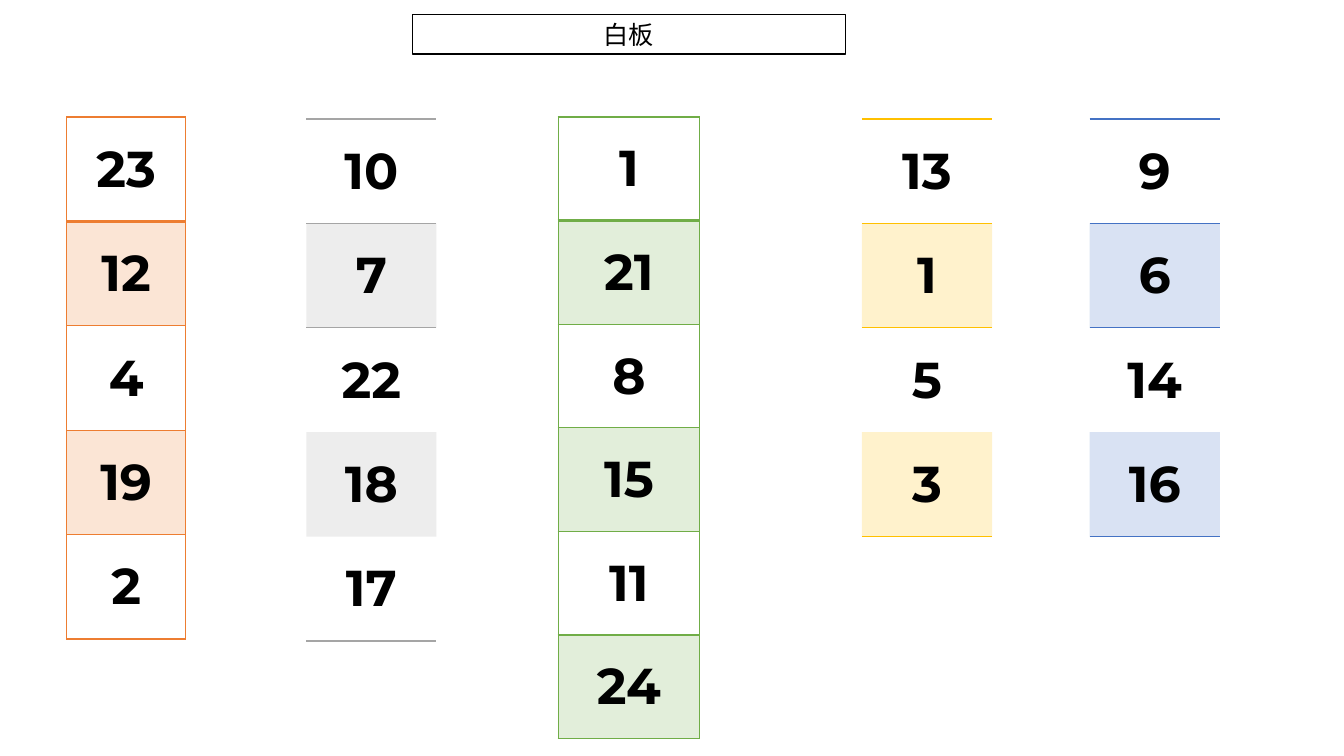
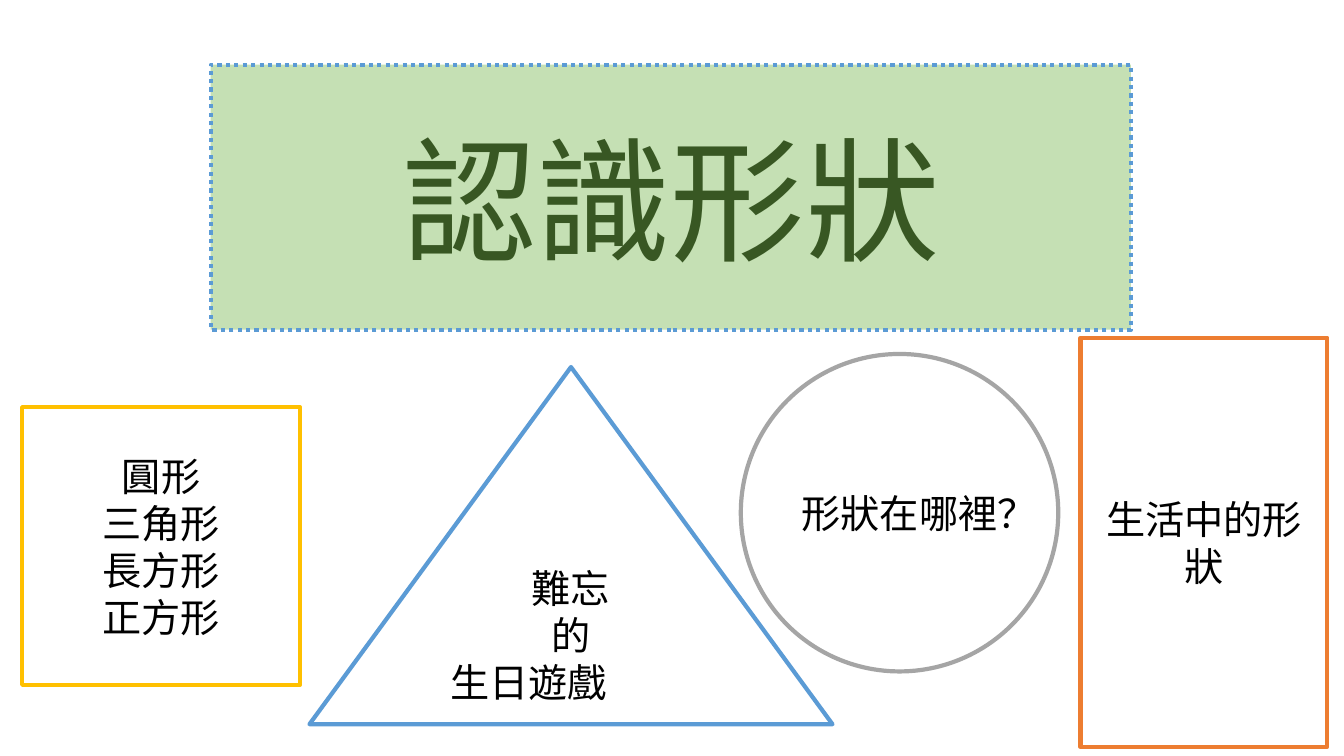
"""Build a whiteboard of number columns and a lesson opener on shapes."""
import dataclasses
import typing

import lxml.etree
import pptx
import pptx.dml.color
import pptx.enum.dml
import pptx.enum.shapes
import pptx.enum.text
import pptx.oxml.ns
import pptx.util

Cm = pptx.util.Cm
Pt = pptx.util.Pt
qn = pptx.oxml.ns.qn
KIND = pptx.enum.shapes.MSO_SHAPE
ALIGN = pptx.enum.text.PP_ALIGN
MIDDLE = pptx.enum.text.MSO_ANCHOR.MIDDLE
PLAIN = "{2D5ABB26-0587-4C30-8999-92F81FD0307C}"

BLACK = "000000"
WHITE = "FFFFFF"
ORANGE = "ED7D31"
GREY = "A5A5A5"
GREEN = "70AD47"
GOLD = "FFC000"
BLUE = "4472C4"
SKY = "5B9BD5"
LEAF = "C5E0B4"
MOSS = "385723"

HAN = "Noto Sans CJK SC"
DIGIT = {"name": "Montserrat", "size": Pt(36), "bold": True}
LABEL = {"name": "Calibri", "size": Pt(18), "bold": False}
HERO = {"name": HAN, "size": Pt(96), "bold": False}
BODY = {"name": HAN, "size": Pt(28), "bold": False}
FRAME = {
    "word_wrap": True,
    "vertical_anchor": MIDDLE,
    "auto_size": pptx.enum.text.MSO_AUTO_SIZE.NONE,
}


@dataclasses.dataclass
class Column:
    """A one-column table of numbers."""

    left: float
    top: float
    width: float
    row: float
    tone: str
    values: tuple[int, ...]
    boxed: bool = False


@dataclasses.dataclass
class Card:
    """An outlined shape with lines of text."""

    kind: typing.Any
    box: tuple[float, float, float, float]
    edge: str
    lines: tuple[str, ...]
    last: typing.Any = ALIGN.CENTER


COLUMNS = (
    Column(1.68, 2.95, 3, 2.63, ORANGE, (23, 12, 4, 19, 2), True),
    Column(7.72, 3, 3.28, 2.63, GREY, (10, 7, 22, 18, 17)),
    Column(14.07, 2.95, 3.56, 2.61, GREEN, (1, 21, 8, 15, 11, 24), True),
    Column(21.72, 3, 3.28, 2.63, GOLD, (13, 1, 5, 3)),
    Column(27.46, 3, 3.28, 2.63, BLUE, (9, 6, 14, 16)),
)
CARDS = (
    Card(KIND.RECTANGLE, (0.56, 10.26, 7, 7), GOLD,
         ("圓形", "三角形", "長方形", "正方形")),
    Card(KIND.ISOSCELES_TRIANGLE, (7.8, 9.25, 13.18, 9), SKY,
         ("難忘", "的", "生日遊戲"), ALIGN.LEFT),
    Card(KIND.OVAL, (18.67, 8.92, 8, 8), GREY, ("形狀在哪裡？",)),
    Card(KIND.RECTANGLE, (27.23, 8.51, 6.22, 10.31), ORANGE, ("生活中的形狀",)),
)


def apply(target: typing.Any, values: dict[str, typing.Any]) -> None:
    """Set each named value on the target."""
    for name, value in values.items():
        setattr(target, name, value)


def paint(fill: typing.Any, tone: str) -> None:
    """Give a fill one solid colour."""
    fill.solid()
    fill.fore_color.rgb = pptx.dml.color.RGBColor.from_string(tone)


def write(frame: typing.Any, lines: tuple[str, ...], form: dict[str, typing.Any],
          tone: str = BLACK, last: typing.Any = ALIGN.CENTER) -> None:
    """Write centred lines, the last one with its own alignment."""
    for spot, line in enumerate(lines):
        para = frame.add_paragraph() if spot else frame.paragraphs[0]
        para.alignment = last if spot == len(lines) - 1 else ALIGN.CENTER
        run = para.add_run()
        run.text = line
        paint(run.font.fill, tone)
        apply(run.font, form)
        face = lxml.etree.SubElement(run.font._element, qn("a:ea"))
        face.set("typeface", form["name"])


def place(shape: typing.Any, box: tuple[float, float, float, float]) -> None:
    """Move and size a shape in centimetres."""
    apply(shape, dict(zip(("left", "top", "width", "height"), map(Cm, box))))


def finish(shape: typing.Any, fill: str, edge: str, weight: float) -> None:
    """Set the fill, outline and text frame of a shape."""
    paint(shape.fill, fill)
    paint(shape.line.fill, edge)
    shape.line.width = Pt(weight)
    apply(shape.text_frame, FRAME)


def head(slide: typing.Any, box: tuple[float, float, float, float],
         form: str, fill: str, edge: str, weight: float) -> typing.Any:
    """Turn the title placeholder into a framed shape."""
    title = slide.shapes.title
    place(title, box)
    geom = lxml.etree.SubElement(title._element.spPr, qn("a:prstGeom"))
    geom.set("prst", form)
    lxml.etree.SubElement(geom, qn("a:avLst"))
    finish(title, fill, edge, weight)
    return title


def rule(cell: typing.Any, side: str, tone: str, weight: float) -> None:
    """Draw one border of a cell."""
    props = cell._tc.get_or_add_tcPr()
    line = lxml.etree.SubElement(props, qn(f"a:ln{side}"), w=str(Pt(weight)))
    solid = lxml.etree.SubElement(line, qn("a:solidFill"))
    lxml.etree.SubElement(solid, qn("a:srgbClr"), val=tone)


def sides(column: Column, spot: int) -> dict[str, float]:
    """Tell which borders a row has and how wide they are."""
    if column.boxed:
        return {"L": 1, "R": 1, "T": 1 if spot != 1 else 2, "B": 1 if spot else 2}
    if spot == 0:
        return {"T": 1, "B": 1}
    if spot == 1:
        return {"T": 1}
    return {"B": 1} if spot == len(column.values) - 1 else {}


def draw_column(slide: typing.Any, column: Column) -> None:
    """Draw one table of numbers with every second row tinted."""
    count = len(column.values)
    box = (column.left, column.top, column.width, column.row * count)
    table = slide.shapes.add_table(count, 1, *map(Cm, box)).table
    apply(table, {"first_row": False, "horz_banding": False})
    table._tbl.tblPr.find(qn("a:tableStyleId")).text = PLAIN
    for spot, value in enumerate(column.values):
        table.rows[spot].height = Cm(column.row)
        cell = table.cell(spot, 0)
        cell.vertical_anchor = MIDDLE
        for side, weight in sides(column, spot).items():
            rule(cell, side, column.tone, weight)
        if spot % 2:
            paint(cell.fill, column.tone)
            shade = cell._tc.tcPr.find(qn("a:solidFill"))[0]
            lxml.etree.SubElement(shade, qn("a:alpha"), val="20000")
        else:
            cell.fill.background()
        write(cell.text_frame, (str(value),), DIGIT)


def draw_card(slide: typing.Any, card: Card) -> None:
    """Draw one outlined shape with its text."""
    shape = slide.shapes.add_shape(card.kind, *map(Cm, card.box))
    shape.shadow.inherit = False
    finish(shape, WHITE, card.edge, 3)
    write(shape.text_frame, card.lines, BODY, last=card.last)


def main() -> None:
    """Build and save both slides."""
    deck = pptx.Presentation()
    apply(deck, {"slide_width": Cm(33.87), "slide_height": Cm(19.05)})
    layout = deck.slide_layouts.get_by_name("Title Only")

    board = deck.slides.add_slide(layout)
    title = head(board, (10.39, 0.36, 10.92, 1), "rect", WHITE, BLACK, 1)
    write(title.text_frame, ("白板",), LABEL)
    for column in COLUMNS:
        draw_column(board, column)

    lesson = deck.slides.add_slide(layout)
    title = head(lesson, (5.31, 1.63, 23.19, 6.68),
                 "flowChartAlternateProcess", LEAF, SKY, 3)
    title.line.dash_style = pptx.enum.dml.MSO_LINE.ROUND_DOT
    write(title.text_frame, ("認識形狀",), HERO, MOSS)
    for card in CARDS:
        draw_card(lesson, card)

    deck.save("out.pptx")


if __name__ == "__main__":
    main()
